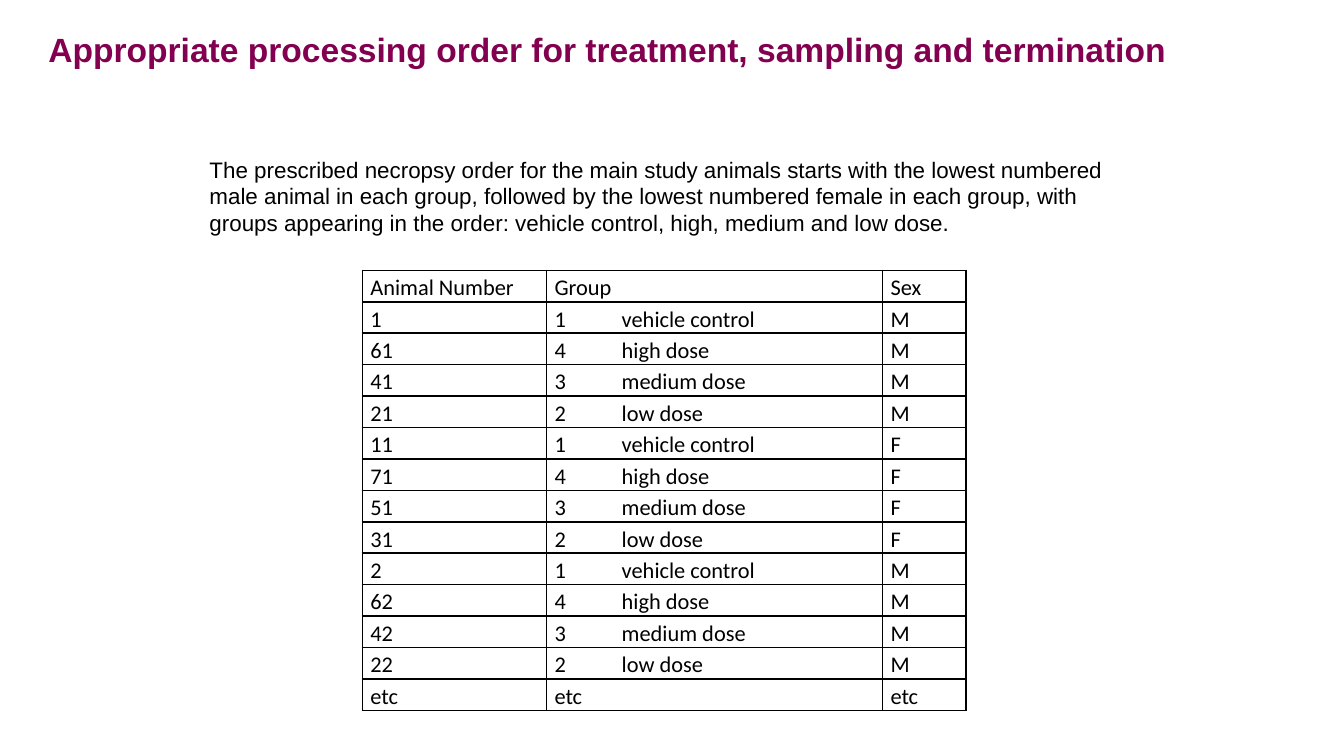
from itertools import cycle, product

from lxml import etree
from pptx import Presentation
from pptx import util as u
from pptx.dml import color
from pptx.enum import text
from pptx.oxml import ns

TITLE = "Appropriate processing order for treatment, sampling and termination"
INTRO = (
    "The prescribed necropsy order for the main study animals starts with the lowest "
    "numbered male animal in each group, followed by the lowest numbered female in each "
    "group, with groups appearing in the order: vehicle control, high, medium and low dose."
)
GROUPS = ["1\tvehicle control", "4\thigh dose", "3\tmedium dose", "2\tlow dose"]
ANIMALS = [1, 61, 41, 21, 11, 71, 51, 31, 2, 62, 42, 22]
SEXES = "MMMMFFFFMMMM"


def rgb(value):
    """Turn a hex string into a colour."""
    return color.RGBColor.from_string(value)


class SlideBuilder:
    """Hold the style and the current slide, and add its elements."""

    heading_color = "830051"
    ink = "000000"
    text_font = "Arial"
    table_font = "Calibri"
    border_width = u.Pt(1)

    def __init__(self, slide):
        """Keep the slide that receives the elements."""
        self.slide = slide

    def format_runs(self, paragraph, font, size, ink, bold=False):
        """Apply one character style to every run of a paragraph."""
        for run in paragraph.runs:
            run.font.name = font
            run.font.size = u.Pt(size)
            run.font.bold = bold
            run.font.color.rgb = rgb(ink)

    def title(self, wording, left, top, width, height):
        """Place and format the title placeholder."""
        heading = self.slide.shapes.title
        heading.left, heading.top = u.Cm(left), u.Cm(top)
        heading.width, heading.height = u.Cm(width), u.Cm(height)
        frame = heading.text_frame
        frame.text = wording
        frame.word_wrap = True
        frame.auto_size = text.MSO_AUTO_SIZE.NONE
        frame.vertical_anchor = text.MSO_ANCHOR.TOP
        frame.paragraphs[0].alignment = text.PP_ALIGN.LEFT
        self.format_runs(frame.paragraphs[0], self.text_font, 18, self.heading_color, True)

    def paragraph(self, wording, left, top, width, height):
        """Add a wrapped block of running text."""
        block = self.slide.shapes.add_textbox(u.Cm(left), u.Cm(top), u.Cm(width), u.Cm(height))
        frame = block.text_frame
        frame.text = wording
        frame.word_wrap = True
        frame.auto_size = text.MSO_AUTO_SIZE.SHAPE_TO_FIT_TEXT
        frame.vertical_anchor = text.MSO_ANCHOR.MIDDLE
        frame.margin_left = frame.margin_right = u.Cm(0.18)
        frame.margin_top = frame.margin_bottom = u.Cm(0.1)
        frame.paragraphs[0].space_after = u.Pt(4.5)
        self.format_runs(frame.paragraphs[0], self.text_font, 12, self.ink)

    def table(self, rows, left, top, widths, row_height):
        """Add a plain bordered table."""
        grid = self.slide.shapes.add_table(
            len(rows), len(widths), u.Cm(left), u.Cm(top),
            u.Cm(sum(widths)), u.Cm(row_height * len(rows)),
        ).table
        grid.first_row = grid.horz_banding = False
        for column, width in zip(grid.columns, widths):
            column.width = u.Cm(width)
        for row, column in product(range(len(rows)), range(len(widths))):
            self.cell(grid.cell(row, column), rows[row][column])

    def cell(self, cell, wording):
        """Fill in and format one table cell."""
        cell.margin_left = cell.margin_right = u.Cm(0.15)
        cell.margin_top = cell.margin_bottom = 0
        cell.fill.background()
        self.borders(cell)
        entry = cell.text_frame.paragraphs[0]
        entry.text = wording
        entry.line_spacing = 1.15
        if "\t" in wording:
            self.tab_stop(entry, 1.27)
        self.format_runs(entry, self.table_font, 12, self.ink)

    def borders(self, cell):
        """Draw a solid line on all four sides of a cell."""
        properties = cell._tc.get_or_add_tcPr()
        for place, side in enumerate("LRTB"):
            line = etree.Element(ns.qn(f"a:ln{side}"), w=str(self.border_width))
            fill = etree.SubElement(line, ns.qn("a:solidFill"))
            etree.SubElement(fill, ns.qn("a:srgbClr"), val=self.ink)
            properties.insert(place, line)

    def tab_stop(self, paragraph, position):
        """Add a left tab stop to a paragraph."""
        stops = etree.SubElement(paragraph._p.get_or_add_pPr(), ns.qn("a:tabLst"))
        etree.SubElement(stops, ns.qn("a:tab"), pos=str(u.Cm(position)), algn="l")


def main():
    """Build and save the presentation."""
    deck = Presentation()
    deck.slide_width, deck.slide_height = u.Cm(25.4), u.Cm(14.29)
    builder = SlideBuilder(deck.slides.add_slide(deck.slide_layouts[5]))
    order = [
        ("Animal Number", "Group", "Sex"),
        *zip(map(str, ANIMALS), cycle(GROUPS), SEXES),
        ("etc", "etc", "etc"),
    ]
    builder.table(order, 6.85, 5.11, [3.48, 6.35, 1.58], 0.58)
    builder.paragraph(INTRO, 3.78, 2.84, 17.78, 1.73)
    builder.title(TITLE, 0.66, 0.41, 24.36, 1.4)
    deck.save("out.pptx")


if __name__ == "__main__":
    main()
